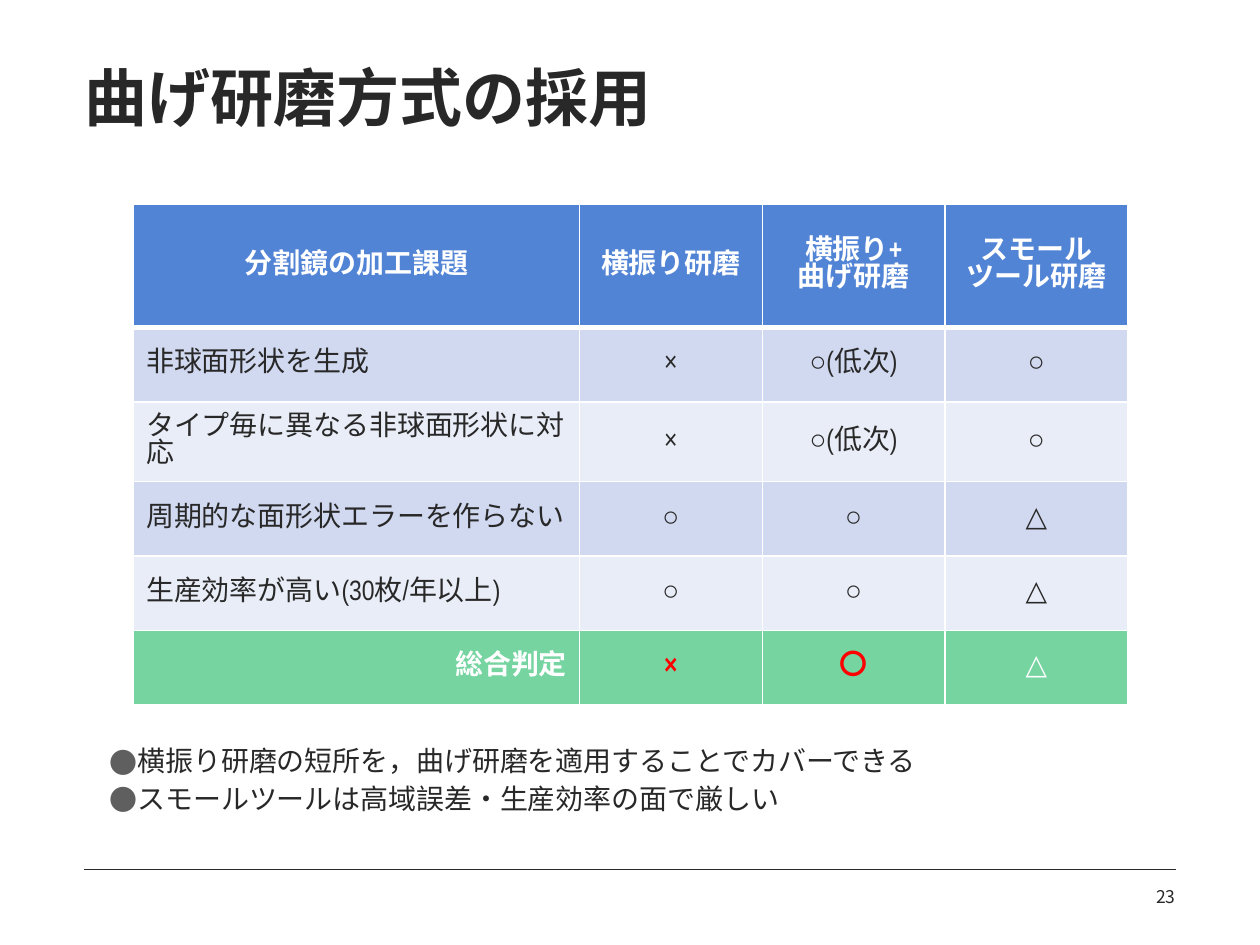
"""Build the slide on adopting the bending polishing method."""
from lxml.etree import SubElement
from pptx import Presentation
from pptx.dml.color import RGBColor
from pptx.enum.shapes import MSO_CONNECTOR
from pptx.enum.text import MSO_ANCHOR, PP_ALIGN
from pptx.oxml.ns import qn
from pptx.util import Inches, Pt

INK = RGBColor(0x28, 0x28, 0x28)
WHITE = RGBColor(0xFF, 0xFF, 0xFF)
RED = RGBColor(0xFF, 0x00, 0x00)
BLUE = RGBColor(0x52, 0x84, 0xD6)
GREEN = RGBColor(0x76, 0xD4, 0xA1)
GRAY = RGBColor(0x5F, 0x5F, 0x5F)
BANDS = [RGBColor(0xD1, 0xD9, 0xF0), RGBColor(0xE9, 0xED, 0xF7)]

HEADERS = ["分割鏡の加工課題", "横振り研磨", "横振り+\n曲げ研磨", "スモール\nツール研磨"]
RATINGS = [
    ["非球面形状を生成", "×", "○(低次)", "○"],
    ["タイプ毎に異なる非球面形状に対応", "×", "○(低次)", "○"],
    ["周期的な面形状エラーを作らない", "○", "○", "△"],
    ["生産効率が高い(30枚/年以上)", "○", "○", "△"],
]
VERDICT = ["総合判定", "×", "〇", "△"]
POINTS = [
    "横振り研磨の短所を，曲げ研磨を適用することでカバーできる",
    "スモールツールは高域誤差・生産効率の面で厳しい",
]


class SlideBuilder:
    """Hold the text style and the current slide."""

    body_font = "Noto Sans CJK JP"
    table_font = "Arial Narrow"

    def __init__(self, slide):
        self.slide = slide

    def fill_text(self, frame, lines, align=PP_ALIGN.LEFT, spacing=1.0, before=0,
                  bullet=None, name=body_font, size=16, color=INK, bold=False):
        for index, line in enumerate(lines):
            paragraph = frame.paragraphs[0] if index == 0 else frame.add_paragraph()
            paragraph.alignment = align
            paragraph.line_spacing = spacing
            paragraph.space_before = Pt(before if index else 0)
            if bullet:
                self.add_bullet(paragraph, bullet)
            run = paragraph.add_run()
            run.text = line
            for key, value in {"name": name, "size": Pt(size), "bold": bold}.items():
                setattr(run.font, key, value)
            run.font.color.rgb = color
            SubElement(run.font._element, qn("a:ea"), typeface=name)

    def add_bullet(self, paragraph, symbol):
        properties = paragraph._p.get_or_add_pPr()
        properties.set("marL", str(Inches(0.39)))
        properties.set("indent", str(Inches(-0.19)))
        color = SubElement(properties, qn("a:buClr"))
        SubElement(color, qn("a:srgbClr"), val=str(GRAY))
        SubElement(properties, qn("a:buFont"), typeface=self.body_font)
        SubElement(properties, qn("a:buChar"), char=symbol)

    def set_frame(self, frame, anchor, bottom=0):
        values = {"margin_left": 0, "margin_right": 0, "margin_top": 0,
                  "margin_bottom": Inches(bottom), "vertical_anchor": anchor,
                  "word_wrap": True}
        for key, value in values.items():
            setattr(frame, key, value)

    def add_title(self, text, left, top, width, height):
        title = self.slide.shapes.title
        place = {"left": left, "top": top, "width": width, "height": height}
        for key, value in place.items():
            setattr(title, key, Inches(value))
        self.set_frame(title.text_frame, MSO_ANCHOR.MIDDLE, 0.06)
        self.fill_text(title.text_frame, [text], spacing=1.2, size=36, bold=True)

    def add_text(self, lines, box, anchor=MSO_ANCHOR.TOP, **style):
        shape = self.slide.shapes.add_textbox(*map(Inches, box))
        self.set_frame(shape.text_frame, anchor)
        self.fill_text(shape.text_frame, lines, **style)

    def add_rule(self, left, right, top):
        rule = self.slide.shapes.add_connector(
            MSO_CONNECTOR.STRAIGHT, *map(Inches, (left, top, right, top)))
        rule.line.color.rgb = INK
        rule.line.width = Pt(0.25)
        SubElement(rule._element.spPr, qn("a:effectLst"))

    def add_table(self, left, top, widths, heights):
        table = self.slide.shapes.add_table(
            len(heights), len(widths),
            *map(Inches, (left, top, sum(widths), sum(heights)))).table
        for column, width in zip(table.columns, widths):
            column.width = Inches(width)
        for row, height in zip(table.rows, heights):
            row.height = Inches(height)
        return table

    def fill_cell(self, cell, text, fill, borders, **style):
        properties = cell._tc.get_or_add_tcPr()
        for side, width in borders.items():
            line = SubElement(properties, qn(f"a:ln{side}"), w=str(Pt(width)))
            solid = SubElement(line, qn("a:solidFill"))
            SubElement(solid, qn("a:srgbClr"), val=str(WHITE))
        cell.fill.solid()
        cell.fill.fore_color.rgb = fill
        cell.vertical_anchor = MSO_ANCHOR.MIDDLE
        self.fill_text(cell.text_frame, text.split("\n"), name=self.table_font, **style)

    def add_ratings(self):
        rows = [HEADERS, *RATINGS, VERDICT]
        table = self.add_table(1.06, 1.62, [3.54] + [1.45] * 3, [0.98] + [0.59] * 5)
        last = len(rows) - 1
        for row, texts in enumerate(rows):
            borders = {"L": 1, "R": 1, "T": 3 if row == 1 else 1, "B": 1 if row else 3}
            for column, text in enumerate(texts):
                style = {"align": PP_ALIGN.CENTER}
                if row == 0:
                    fill = BLUE
                    style.update(color=WHITE, bold=True)
                elif row == last:
                    fill = GREEN
                    style.update(color=RED if column in (1, 2) else WHITE, bold=column < 3)
                else:
                    fill = BANDS[(row - 1) % 2]
                if column == 0 and row:
                    style["align"] = PP_ALIGN.RIGHT if row == last else PP_ALIGN.LEFT
                self.fill_cell(table.cell(row, column), text, fill, borders, **style)


def main():
    presentation = Presentation()
    presentation.slide_width = Inches(10)
    presentation.slide_height = Inches(7.5)
    slide = presentation.slides.add_slide(presentation.slide_layouts[5])
    builder = SlideBuilder(slide)
    builder.add_rule(0.67, 9.33, 6.9)
    builder.add_title("曲げ研磨方式の採用", 0.67, 0.24, 7.72, 0.99)
    builder.add_text(["23"], (8.15, 6.98, 1.18, 0.24), MSO_ANCHOR.MIDDLE,
                     align=PP_ALIGN.RIGHT, spacing=1.2, size=10)
    builder.add_text(POINTS, (0.67, 5.92, 8.66, 0.88), spacing=0.96, before=3, bullet="●")
    builder.add_ratings()
    presentation.save("out.pptx")


if __name__ == "__main__":
    main()
